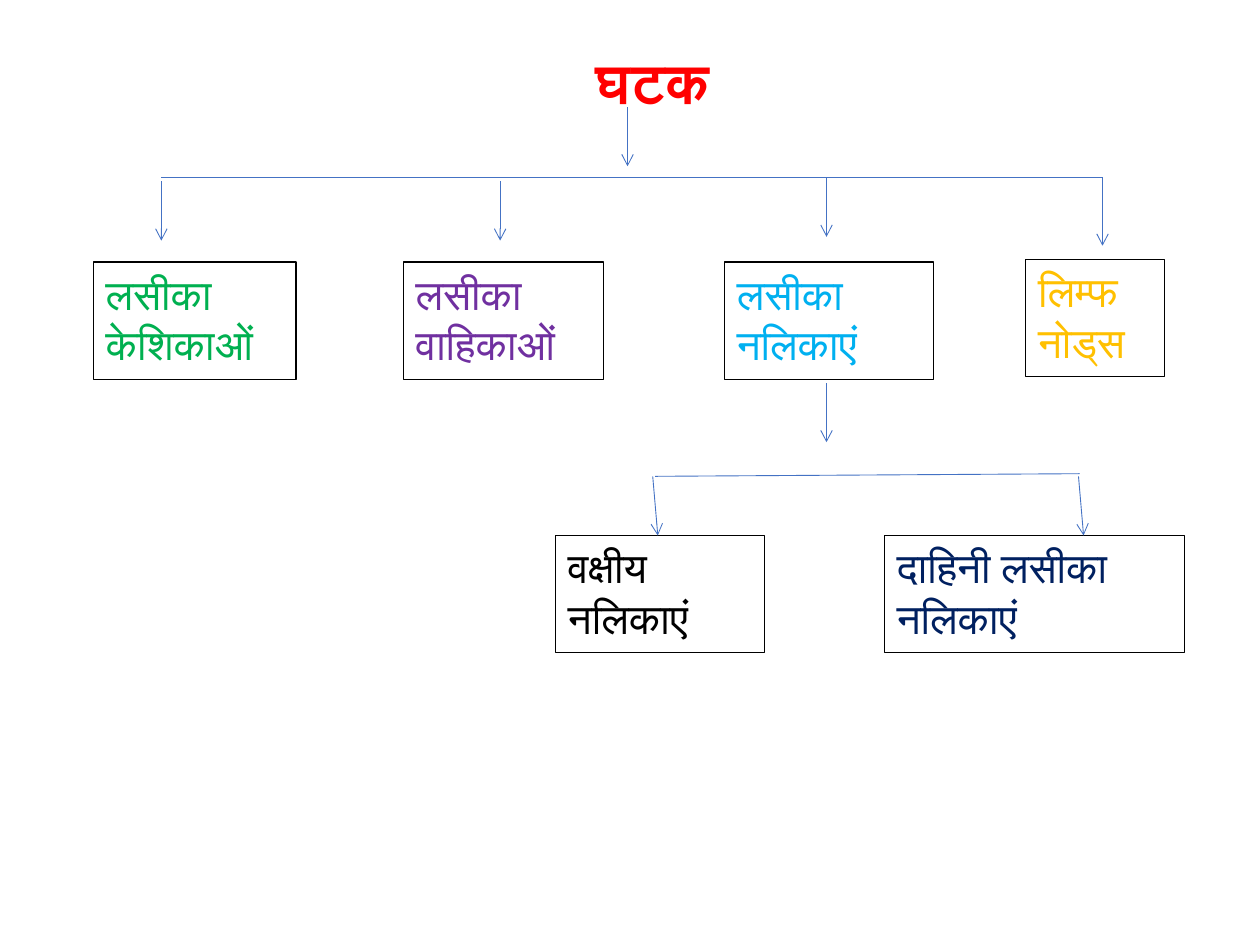
from lxml import etree
from pptx import Presentation
from pptx.dml.color import RGBColor
from pptx.enum.shapes import MSO_CONNECTOR, MSO_SHAPE
from pptx.enum.text import MSO_ANCHOR, PP_ALIGN
from pptx.oxml.ns import qn
from pptx.util import Pt

RECT = MSO_SHAPE.RECTANGLE
LINE = MSO_CONNECTOR.STRAIGHT
TOP, MIDDLE = MSO_ANCHOR.TOP, MSO_ANCHOR.MIDDLE
LEFT, CENTER = PP_ALIGN.LEFT, PP_ALIGN.CENTER

THEME = {
    "font": "Calibri", "title": 32, "label": 24,
    "head": "FF0000", "fill": "FFFFFF", "edge": "000000", "link": "4472C4",
}

TITLE = ("घटक", 261.4, 25.2, 223.2, 46.8)
BOX_H = 67
DROP = 33.8
BAR_Y, ROW_Y = 101.5, 149.8
FORK_Y, SUB_Y = 272.2, 306

# text, left, top, width, colour
BOXES = [
    ("लसीका केशिकाओं", 53.3, ROW_Y, 115.9, "00B050"),
    ("लसीका वाहिकाओं", 230.4, ROW_Y, 114.5, "7030A0"),
    ("लसीका नलिकाएं", 414, ROW_Y, 119.5, "00B0F0"),
    ("लिम्फ नोड्स", 586.1, 148.3, 79.2, "FFC000"),
    ("वक्षीय नलिकाएं", 317.5, SUB_Y, 119.5, "000000"),
    ("दाहिनी लसीका नलिकाएं", 505.4, SUB_Y, 171.4, "002060"),
]

# x1, y1, x2, y2
BARS = [
    (92.2, BAR_Y, 630, BAR_Y),
    (374.4, FORK_Y, 617, 270.7),
]

# x, top, sideways shift, height
ARROWS = [
    (358.6, 61.2, 0, DROP),
    (92.2, 103.7, 0, DROP),
    (285.8, 103.7, 0, DROP),
    (472.3, BAR_Y, 0, DROP),
    (630, BAR_Y, 0, 38.9),
    (472.3, 218.9, 0, DROP),
    (373, FORK_Y, 2.9, DROP),
    (616.3, FORK_Y, 2.9, DROP),
]


def rgb(name):
    return RGBColor.from_string(name)


def write(shape, text, size, color, align, anchor, bold=False):
    frame = shape.text_frame
    frame.text = text
    frame.word_wrap = True
    frame.vertical_anchor = anchor
    para = frame.paragraphs[0]
    para.alignment = align
    font = para.runs[0].font
    font.name, font.size, font.bold = THEME["font"], Pt(size), bold
    font.color.rgb = rgb(color)
    return para


def add_title(slide):
    text, *area = TITLE
    box = slide.shapes.add_textbox(*map(Pt, area))
    para = write(box, text, THEME["title"], THEME["head"], CENTER, MIDDLE, True)
    para.line_spacing = 0.9


def add_box(slide, text, left, top, width, color):
    box = slide.shapes.add_shape(RECT, Pt(left), Pt(top), Pt(width), Pt(BOX_H))
    box.shadow.inherit = False
    box.fill.solid()
    box.fill.fore_color.rgb = rgb(THEME["fill"])
    box.line.color.rgb = rgb(THEME["edge"])
    box.line.width = Pt(0.75)
    write(box, text, THEME["label"], color, LEFT, TOP)


def add_link(slide, ends, arrow=False):
    link = slide.shapes.add_connector(LINE, *map(Pt, ends))
    link.line.color.rgb = rgb(THEME["link"])
    link.line.width = Pt(0.5)
    props = link._element.spPr
    if arrow:
        etree.SubElement(props.find(qn("a:ln")), qn("a:tailEnd"), type="arrow")
    etree.SubElement(props, qn("a:effectLst"))


def main():
    deck = Presentation()
    deck.slide_width, deck.slide_height = Pt(720), Pt(540)
    slide = deck.slides.add_slide(deck.slide_layouts[6])
    add_title(slide)
    for box in BOXES:
        add_box(slide, *box)
    for bar in BARS:
        add_link(slide, bar)
    for x, y, shift, height in ARROWS:
        add_link(slide, (x, y, x + shift, y + height), arrow=True)
    deck.save("out.pptx")


if __name__ == "__main__":
    main()
